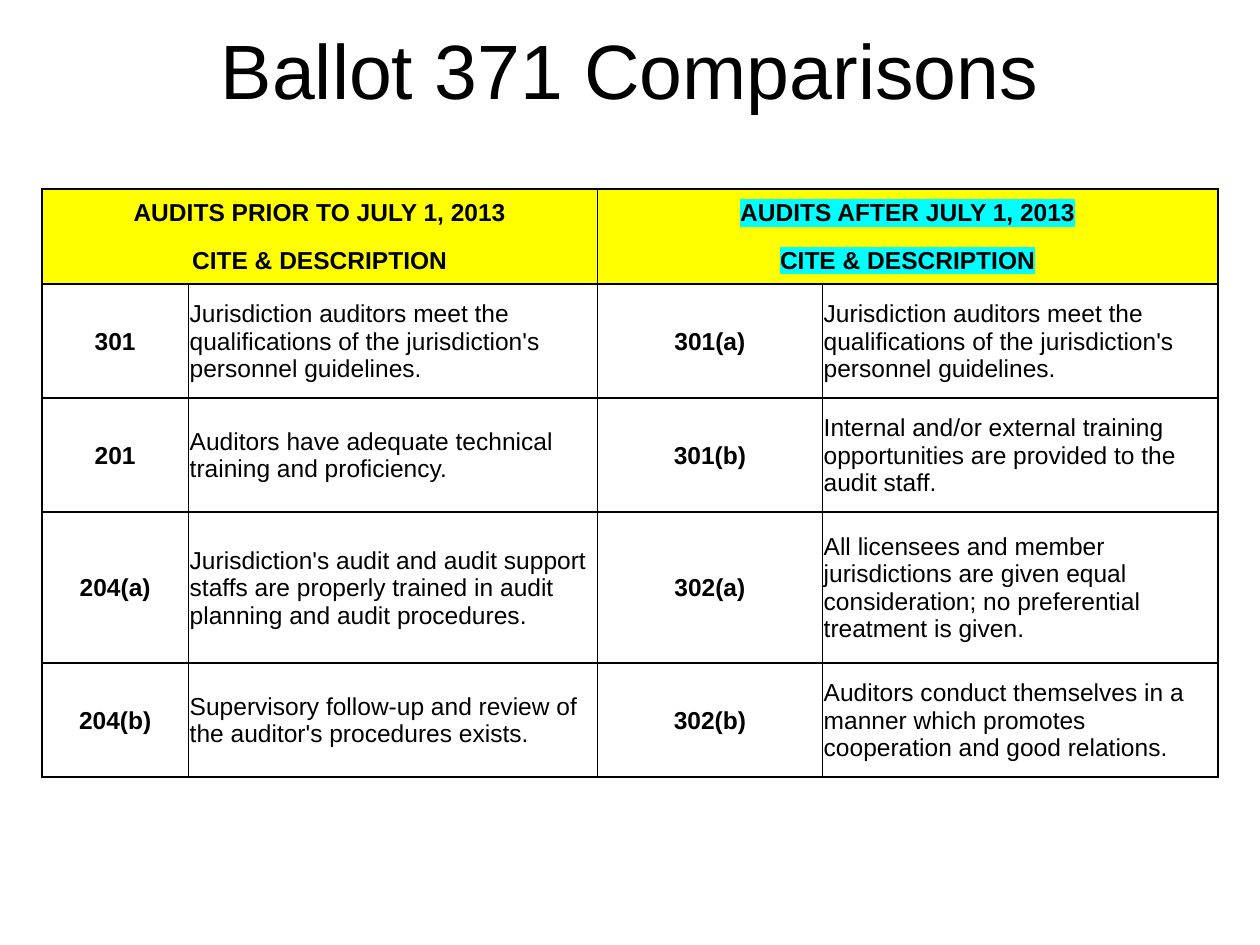
from lxml import etree
from pptx import Presentation
from pptx.dml.color import RGBColor
from pptx.enum.text import MSO_ANCHOR, PP_ALIGN
from pptx.oxml.ns import qn
from pptx.util import Pt

BLACK, YELLOW, CYAN = "000000", "FFFF00", "00FFFF"

COLUMN_WIDTHS = [83.7, 233.7, 128.6, 226]
ROW_HEIGHTS = [26.6, 27.8, 65, 65, 86.4, 65]
HEADINGS = [
    ("AUDITS PRIOR TO JULY 1, 2013", "AUDITS AFTER JULY 1, 2013"),
    ("CITE & DESCRIPTION", "CITE & DESCRIPTION"),
]
COMPARISONS = [
    ("301", "Jurisdiction auditors meet the qualifications of the jurisdiction's personnel guidelines.",
     "301(a)", "Jurisdiction auditors meet the qualifications of the jurisdiction's personnel guidelines."),
    ("201", "Auditors have adequate technical training and proficiency.",
     "301(b)", "Internal and/or external training opportunities are provided to the audit staff."),
    ("204(a)", "Jurisdiction's audit and audit support staffs are properly trained in audit planning "
               "and audit procedures.",
     "302(a)", "All licensees and member jurisdictions are given equal consideration; "
               "no preferential treatment is given."),
    ("204(b)", "Supervisory follow-up and review of the auditor's procedures exists.",
     "302(b)", "Auditors conduct themselves in a manner which promotes cooperation and good relations."),
]


def rgb(color):
    return RGBColor.from_string(color)


def add_color(parent, color):
    etree.SubElement(parent, qn("a:srgbClr"), val=color)


def write(frame, text, size=14, bold=False, align=PP_ALIGN.LEFT, color=BLACK, highlight=None):
    paragraph = frame.paragraphs[0]
    paragraph.alignment = align
    run = paragraph.add_run()
    run.text = text
    run.font.size = Pt(size)
    run.font.bold = bold
    run.font.color.rgb = rgb(color)
    if highlight:
        add_color(etree.SubElement(run.font._element, qn("a:highlight")), highlight)
    run.font.name = "Arial"


def set_borders(cell, sides, color=BLACK, width=1):
    """Draw the sides named by letters out of L, R, T and B; clear the others."""
    properties = cell._tc.get_or_add_tcPr()
    for position, side in enumerate("LRTB"):
        line = etree.Element(qn(f"a:ln{side}"), w=str(Pt(width)))
        if side in sides:
            add_color(etree.SubElement(line, qn("a:solidFill")), color)
        else:
            etree.SubElement(line, qn("a:noFill"))
        properties.insert(position, line)


def style_cell(cell, sides, fill=None):
    cell.vertical_anchor = MSO_ANCHOR.MIDDLE
    cell.margin_left = cell.margin_right = cell.margin_top = Pt(0.75)
    cell.margin_bottom = Pt(0)
    if fill:
        cell.fill.solid()
        cell.fill.fore_color.rgb = rgb(fill)
    else:
        cell.fill.background()
    set_borders(cell, sides)


def add_title(slide, left, top, width, height):
    frame = slide.shapes.add_textbox(Pt(left), Pt(top), Pt(width), Pt(height)).text_frame
    frame.word_wrap = True
    frame.vertical_anchor = MSO_ANCHOR.MIDDLE
    write(frame, "Ballot 371 Comparisons", size=44, align=PP_ALIGN.CENTER)


def fill_headings(table):
    for row, (headings, edge) in enumerate(zip(HEADINGS, "TB")):
        for column, heading, highlight in zip((0, 2), headings, (YELLOW, CYAN)):
            first, second = table.cell(row, column), table.cell(row, column + 1)
            style_cell(first, "LR" + edge, YELLOW)
            style_cell(second, "R" + edge, YELLOW)
            first.merge(second)
            write(first.text_frame, heading, bold=True, align=PP_ALIGN.CENTER, highlight=highlight)


def fill_comparisons(table):
    for row, comparison in enumerate(COMPARISONS, start=len(HEADINGS)):
        for column, text in enumerate(comparison):
            is_cite = column % 2 == 0
            cell = table.cell(row, column)
            style_cell(cell, "LRTB")
            write(cell.text_frame, text, bold=is_cite,
                  align=PP_ALIGN.CENTER if is_cite else PP_ALIGN.LEFT)


def add_comparison_table(slide, left, top, width, height):
    table = slide.shapes.add_table(len(ROW_HEIGHTS), len(COLUMN_WIDTHS),
                                   Pt(left), Pt(top), Pt(width), Pt(height)).table
    table.first_row = table.horz_banding = False
    for column, share in zip(table.columns, COLUMN_WIDTHS):
        column.width = Pt(width * share / sum(COLUMN_WIDTHS))
    for row, share in zip(table.rows, ROW_HEIGHTS):
        row.height = Pt(height * share / sum(ROW_HEIGHTS))
    fill_headings(table)
    fill_comparisons(table)


def main():
    presentation = Presentation()
    presentation.slide_width, presentation.slide_height = Pt(720), Pt(540)
    slide = presentation.slides.add_slide(presentation.slide_layouts[6])
    add_title(slide, 54, 12, 612, 54)
    add_comparison_table(slide, 24, 108, 672, 336)
    presentation.save("out.pptx")


if __name__ == "__main__":
    main()
